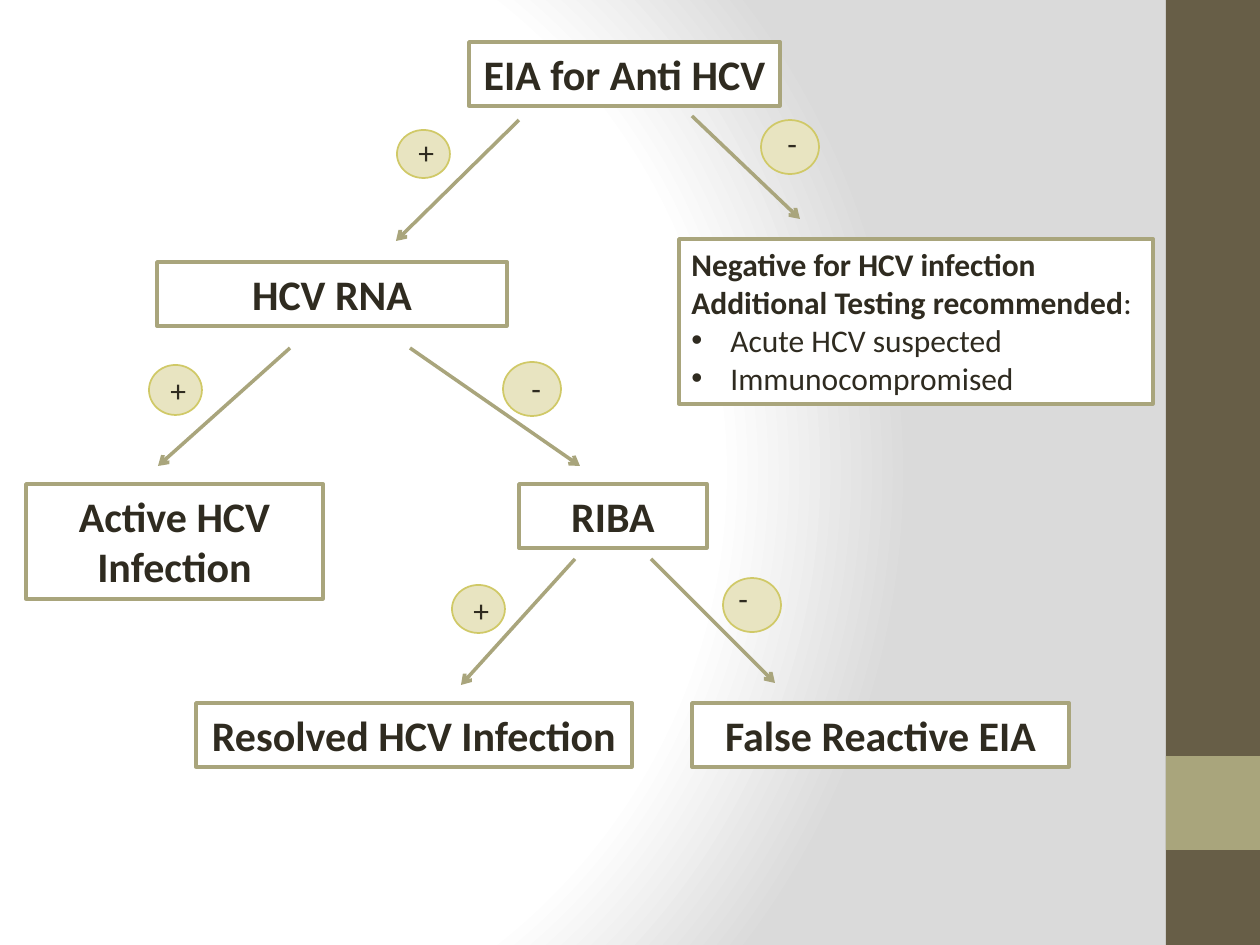
from lxml.etree import SubElement
from pptx import Presentation
from pptx.dml.color import RGBColor
from pptx.enum.shapes import MSO_CONNECTOR, MSO_SHAPE
from pptx.enum.text import MSO_ANCHOR, PP_ALIGN as Align
from pptx.oxml.ns import qn
from pptx.util import Pt

PX = 7257.143  # EMU in a pixel, at 126 pixels to the inch
FONT = "Calibri"
COLORS = {
    "text": "2F2B20", "white": "FFFFFF", "shade": "DADADA", "band": "675E47",
    "accent": "A9A57C", "badge": "E8E4C1", "badge_line": "D0C967",
}
BOX_HEIGHT = 64
# text, left, top, width, height, wrap
BOXES = [
    ("EIA for Anti HCV", 469, 42, 311, BOX_HEIGHT, False),
    ("HCV RNA", 157, 262, 350, BOX_HEIGHT, True),
    ("RIBA", 519, 484, 188, BOX_HEIGHT, True),
    ("Active HCV Infection", 26, 484, 297, 115, True),
    ("Resolved HCV Infection", 196, 703, 436, BOX_HEIGHT, False),
    ("False Reactive EIA", 692, 703, 377, BOX_HEIGHT, True),
]
# start x, start y, end x, end y
ARROWS = [
    (692, 116, 800, 219), (519, 120, 396, 241),
    (410, 348, 580, 466), (290, 348, 158, 466),
    (575, 559, 461, 685), (651, 559, 775, 683),
]
# sign, badge left, top, width, height, sign left, top
BADGES = [
    ("-", 761, 120, 58, 54, 775, 118),
    ("+", 397, 130, 53, 48, 406, 127),
    ("+", 149, 365, 53, 50, 158, 365),
    ("+", 452, 585, 53, 48, 461, 585),
    ("-", 503, 362, 58, 54, 519, 363),
    ("-", 723, 578, 58, 54, 726, 573),
]


def px(*lengths):
    return [round(length * PX) for length in lengths]


def rgb(name):
    return RGBColor.from_string(COLORS[name])


def set_font(font, size, bold=False):
    font.name, font.size, font.bold = FONT, Pt(size), bold
    font.color.rgb = rgb("text")


def set_background(slide):
    """Fill the slide with a circular gradient, white in the centre."""
    slide.background.fill.gradient()
    gradient = slide.element.find(".//" + qn("a:gradFill"))
    for child in list(gradient):
        gradient.remove(child)
    stops = SubElement(gradient, qn("a:gsLst"))
    for position, name in ((0, "white"), (75, "white"), (100, "shade")):
        stop = SubElement(stops, qn("a:gs"), pos=str(position * 1000))
        SubElement(stop, qn("a:srgbClr"), val=COLORS[name])
    circle = SubElement(gradient, qn("a:path"), {"path": "circle"})
    SubElement(circle, qn("a:fillToRect"), l="20000", t="50000", r="100000", b="50000")


def add_shape(slide, kind, bounds, fill, line=None, weight=1):
    shape = slide.shapes.add_shape(kind, *px(*bounds))
    shape.shadow.inherit = False
    shape.fill.solid()
    shape.fill.fore_color.rgb = rgb(fill)
    if line:
        shape.line.color.rgb = rgb(line)
        shape.line.width = Pt(weight)
    else:
        shape.line.fill.background()
    return shape


def add_box(slide, bounds, wrap):
    """Add an outlined white box and return its text frame."""
    box = add_shape(slide, MSO_SHAPE.RECTANGLE, bounds, "white", "accent", 2)
    frame = box.text_frame
    frame.word_wrap = wrap
    frame.vertical_anchor = MSO_ANCHOR.TOP
    return frame


def add_step(slide, text, *bounds, wrap):
    para = add_box(slide, bounds, wrap).paragraphs[0]
    para.text = text
    para.alignment = Align.CENTER
    set_font(para.font, 24, bold=True)


def set_bullet(para):
    properties = para._p.get_or_add_pPr()
    indent = round(0.31 * 914400)
    properties.set("marL", str(indent))
    properties.set("indent", str(-indent))
    SubElement(properties, qn("a:buFont"), typeface="Arial")
    SubElement(properties, qn("a:buChar"), char="•")


def add_negative_result(slide):
    frame = add_box(slide, (679, 239, 474, 165), wrap=False)
    lines = [
        ("Negative for HCV infection", True), ("Additional Testing recommended", True),
        ("Acute HCV suspected", False), ("Immunocompromised", False),
    ]
    frame.text = "\n".join(text for text, _ in lines)
    for para, (_, heading) in zip(frame.paragraphs, lines):
        para.alignment = Align.LEFT
        if not heading:
            set_bullet(para)
        set_font(para.font, 18, heading)
    colon = frame.paragraphs[1].add_run()
    colon.text = ":"
    colon.font.bold = False


def add_arrow(slide, *ends):
    arrow = slide.shapes.add_connector(MSO_CONNECTOR.STRAIGHT, *px(*ends))
    arrow.line.color.rgb = rgb("accent")
    arrow.line.width = Pt(2)
    SubElement(arrow.line._get_or_add_ln(), qn("a:tailEnd"), type="arrow")
    SubElement(arrow._element.spPr, qn("a:effectLst"))


def add_badge(slide, sign, left, top, width, height, sign_left, sign_top):
    add_shape(slide, MSO_SHAPE.OVAL, (left, top, width, height), "badge", "badge_line")
    sign_width = 39 if sign == "+" else 35
    label = slide.shapes.add_textbox(*px(sign_left, sign_top, sign_width, 50))
    label.text_frame.word_wrap = sign == "+"
    para = label.text_frame.paragraphs[0]
    para.text = sign
    set_font(para.font, 18)


def main():
    deck = Presentation()
    deck.slide_width, deck.slide_height = px(1260, 945)
    slide = deck.slides.add_slide(deck.slide_layouts[6])
    set_background(slide)
    add_shape(slide, MSO_SHAPE.RECTANGLE, (1166, 0, 94, 945), "band")
    add_shape(slide, MSO_SHAPE.RECTANGLE, (1166, 756, 94, 94), "accent")
    for *step, wrap in BOXES:
        add_step(slide, *step, wrap=wrap)
    add_negative_result(slide)
    for ends in ARROWS:
        add_arrow(slide, *ends)
    for badge in BADGES:
        add_badge(slide, *badge)
    deck.save("out.pptx")


if __name__ == "__main__":
    main()
